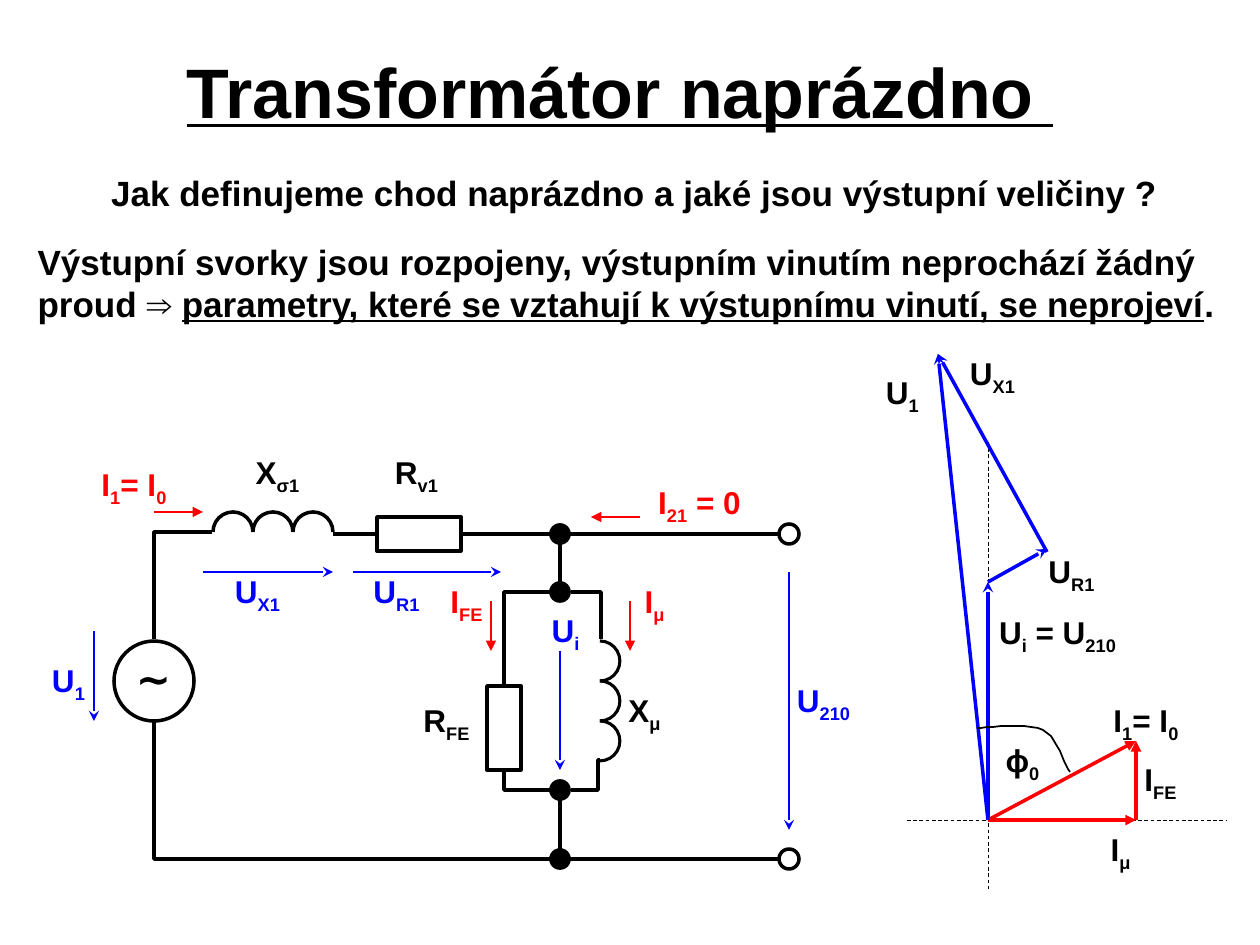
from dataclasses import dataclass

import pptx
import pptx.dml.color
import pptx.enum.dml
import pptx.enum.shapes
import pptx.enum.text
import pptx.oxml.ns
import pptx.util
from lxml import etree

PX = 914400 / 126
COLORS = {"ink": "000000", "voltage": "0000FF", "current": "FF0000"}
FONT = "Arial"
BUMP = 40
SHAPE = pptx.enum.shapes.MSO_SHAPE
CENTER = pptx.enum.text.PP_ALIGN.CENTER
MIDDLE = pptx.enum.text.MSO_ANCHOR.MIDDLE
Point = tuple[int, int]


@dataclass
class Label:
    """Symbols alternate between normal and subscript."""
    symbols: tuple[str, ...]
    left: int
    top: int
    width: int = 69
    color: str = "ink"
    size: int = 18
    height: int = 38


@dataclass
class Line:
    start: Point
    end: Point
    color: str = "ink"
    weight: float = 2
    head: str = ""
    dashed: bool = False


LABELS = [
    Label(("U", "1"), 44, 661, 49, "voltage"),
    Label(("I", "1", "= I", "0"), 84, 465, 100, "current"),
    Label(("I", "21", " = 0"), 630, 483, 139, "current"),
    Label(("U", "i"), 541, 611, 49, "voltage"),
    Label(("I", "μ"), 620, 582, color="current"),
    Label(("I", "FE"), 432, 582, color="current"),
    Label(("U", "210"), 789, 681, color="voltage"),
    Label(("U", "R1"), 362, 572, color="voltage"),
    Label(("U", "X1"), 223, 572, color="voltage"),
    Label(("X", "σ1"), 243, 453),
    Label(("R", "v1"), 382, 453),
    Label(("R", "FE"), 412, 701),
    Label(("X", "μ"), 610, 691),
    Label(("∼",), 124, 653, 59, size=24, height=50),
    Label(("U", "i", " = U", "210"), 988, 613, 139),
    Label(("I", "μ"), 1086, 830),
    Label(("I", "FE"), 1126, 760),
    Label(("I", "1", "= I", "0"), 1096, 701, 100),
    Label(("U", "R1"), 1037, 552),
    Label(("U", "X1"), 958, 354),
    Label(("U", "1"), 878, 373, 49),
    Label(("ϕ", "0"), 988, 741),
]

ORIGIN, IRON, MAGNETIZING = (988, 820), (1136, 741), (1136, 820)
INDUCED, SUPPLY = (988, 582), (938, 354)
LINES = [
    # circuit wires
    Line((333, 534), (376, 534)),
    Line((463, 534), (551, 534)),
    Line((570, 534), (778, 534)),
    Line((570, 859), (778, 859)),
    Line((560, 544), (560, 582)),
    Line((560, 800), (560, 849)),
    # circuit arrows
    Line((94, 631), (94, 721), "voltage", 1, "stealth"),
    Line((560, 651), (560, 770), "voltage", 1, "stealth"),
    Line((789, 572), (789, 830), "voltage", 1, "stealth"),
    Line((353, 572), (501, 572), "voltage", 1, "stealth"),
    Line((203, 572), (333, 572), "voltage", 1, "stealth"),
    Line((154, 512), (203, 512), "current", 1, "triangle"),
    Line((640, 517), (591, 517), "current", 1, "triangle"),
    Line((491, 601), (491, 651), "current", 1, "triangle"),
    Line((630, 601), (630, 651), "current", 1, "triangle"),
    # phasor diagram
    Line((907, 820), (1226, 820), weight=0.5, dashed=True),
    Line((988, 442), (988, 890), weight=0.5, dashed=True),
    Line(ORIGIN, INDUCED, "voltage", 2, "stealth"),
    Line(ORIGIN, MAGNETIZING, "current", 2, "triangle"),
    Line(MAGNETIZING, IRON, "current", 2, "triangle"),
    Line(ORIGIN, IRON, "current", 2, "triangle"),
    Line((1047, 552), SUPPLY, "voltage", 2, "stealth"),
    Line(INDUCED, (1047, 549), "voltage", 2, "stealth"),
    Line(ORIGIN, SUPPLY, "voltage", 2, "stealth"),
]

BENT_WIRES = [
    [(551, 592), (504, 592), (504, 684)],
    [(571, 592), (601, 592), (601, 639)],
    [(504, 772), (504, 790), (551, 790)],
    [(600, 760), (598, 760), (598, 790), (571, 790)],
    [(154, 722), (154, 859), (551, 859)],
    [(154, 639), (154, 532), (212, 532)],
]
ANGLE_CURVES = [
    [(977, 728), (988, 728), (1028, 722), (1043, 730)],
    [(1043, 730), (1058, 737), (1063, 764), (1070, 772)],
]


def emu(*lengths: int) -> list[int]:
    return [round(length * PX) for length in lengths]


def rgb(color: str) -> pptx.dml.color.RGBColor:
    return pptx.dml.color.RGBColor.from_string(COLORS[color])


def add_span(para, text: str, size: int, color: str = "ink", underline: bool = False, sub: bool = False) -> None:
    span = para.add_run()
    span.text = text
    font = span.font
    font.name, font.size, font.bold = FONT, pptx.util.Pt(size), True
    font.underline = underline
    font.color.rgb = rgb(color)
    if sub:
        span._r.get_or_add_rPr().set("baseline", "-25000")


def place_text(holder, left: int, top: int, width: int, height: int):
    """Move a placeholder and return its paragraph, without bullet or indent."""
    holder.left, holder.top, holder.width, holder.height = emu(left, top, width, height)
    holder.text_frame.auto_size = pptx.enum.text.MSO_AUTO_SIZE.NONE
    para = holder.text_frame.paragraphs[0]
    para.space_before = pptx.util.Pt(0)
    props = para._p.get_or_add_pPr()
    props.set("marL", "0")
    props.set("indent", "0")
    etree.SubElement(props, pptx.oxml.ns.qn("a:buNone"))
    return para


def add_label(page, label: Label) -> None:
    box = page.shapes.add_textbox(*emu(label.left, label.top, label.width, label.height))
    frame = box.text_frame
    frame.word_wrap = True
    frame.margin_left = frame.margin_right = frame.margin_top = frame.margin_bottom = 0
    if label.size > 18:
        frame.vertical_anchor = MIDDLE
    para = frame.paragraphs[0]
    para.alignment = CENTER
    for index, symbol in enumerate(label.symbols):
        add_span(para, symbol, label.size, label.color, sub=index % 2 == 1)


def add_line(page, line: Line) -> None:
    straight = pptx.enum.shapes.MSO_CONNECTOR.STRAIGHT
    connector = page.shapes.add_connector(straight, *emu(*line.start, *line.end))
    connector.line.width = pptx.util.Pt(line.weight)
    connector.line.color.rgb = rgb(line.color)
    if line.dashed:
        connector.line.dash_style = pptx.enum.dml.MSO_LINE.DASH
    qn = pptx.oxml.ns.qn
    props = connector._element.spPr
    if line.head:
        etree.SubElement(props.find(qn("a:ln")), qn("a:tailEnd"), type=line.head)
    etree.SubElement(props, qn("a:effectLst"))


def outline(shape, weight: float, filled: bool = False) -> None:
    shape.shadow.inherit = False
    shape.line.color.rgb = rgb("ink")
    shape.line.width = pptx.util.Pt(weight)
    if filled:
        shape.fill.solid()
        shape.fill.fore_color.rgb = rgb("ink")
    else:
        shape.fill.background()


def add_polyline(page, points: list, weight: float) -> None:
    builder = page.shapes.build_freeform(*points[0], scale=PX)
    builder.add_line_segments(points[1:], close=False)
    outline(builder.convert_to_shape(), weight)


def add_circle(page, center: Point, diameter: int, weight: float, filled: bool = False) -> None:
    left, top = (value - diameter // 2 for value in center)
    circle = page.shapes.add_shape(SHAPE.OVAL, *emu(left, top, diameter, diameter))
    outline(circle, weight, filled)


def add_coil(page, start: Point, step: Point, angles: tuple[int, int], weight: float) -> None:
    """Draw three half circles, each one step after the last."""
    for turn in range(3):
        left, top = (first + turn * move for first, move in zip(start, step))
        arc = page.shapes.add_shape(SHAPE.ARC, *emu(left, top, BUMP, BUMP))
        for index, angle in enumerate(angles):
            arc.adjustments[index] = angle * 0.6  # 60000 units a degree, in 100000ths
        outline(arc, weight)


def bezier(curve: list[Point], steps: int = 10) -> list[tuple[float, float]]:
    def at(t: float) -> tuple[float, float]:
        weights = ((1 - t) ** 3, 3 * t * (1 - t) ** 2, 3 * t * t * (1 - t), t ** 3)
        return tuple(sum(w * value for w, value in zip(weights, axis)) for axis in zip(*curve))
    return [at(step / steps) for step in range(steps + 1)]


def main() -> None:
    deck = pptx.Presentation()
    deck.slide_width, deck.slide_height = emu(1260, 945)
    page = deck.slides.add_slide(deck.slide_layouts[3])
    title, question, answer = page.placeholders

    para = place_text(title, 154, 35, 932, 110)
    title.text_frame.vertical_anchor = MIDDLE
    para.alignment = CENTER
    add_span(para, "Transformátor naprázdno ", 40, underline=True)
    para = place_text(question, 94, 165, 1081, 54)
    para.alignment = CENTER
    add_span(para, "Jak definujeme chod naprázdno a jaké jsou výstupní veličiny ?", 20)
    para = place_text(answer, 25, 234, 1211, 97)
    add_span(para, "Výstupní svorky jsou rozpojeny, výstupním vinutím neprochází žádný proud ⇒ ", 20)
    add_span(para, "parametry, které se vztahují k výstupnímu vinutí, se neprojeví", 20, underline=True)
    add_span(para, ".", 20)

    for points in BENT_WIRES:
        add_polyline(page, points, 2)
    for line in LINES:
        add_line(page, line)
    for y in (534, 592, 790, 859):
        add_circle(page, (560, y), 20, 1, filled=True)
    for y in (534, 859):
        add_circle(page, (789, y), 20, 2)
    add_circle(page, (154, 681), 80, 2)
    for bounds in ((377, 517, 84, 34), (487, 686, 34, 84)):
        outline(page.shapes.add_shape(SHAPE.RECTANGLE, *emu(*bounds)), 2)
    add_coil(page, (213, 512), (BUMP, 0), (180, 0), 2)
    add_coil(page, (580, 641), (0, BUMP), (270, 90), 1.75)
    first, second = map(bezier, ANGLE_CURVES)
    add_polyline(page, first + second[1:], 1)
    for label in LABELS:
        add_label(page, label)
    deck.save("out.pptx")


if __name__ == "__main__":
    main()
